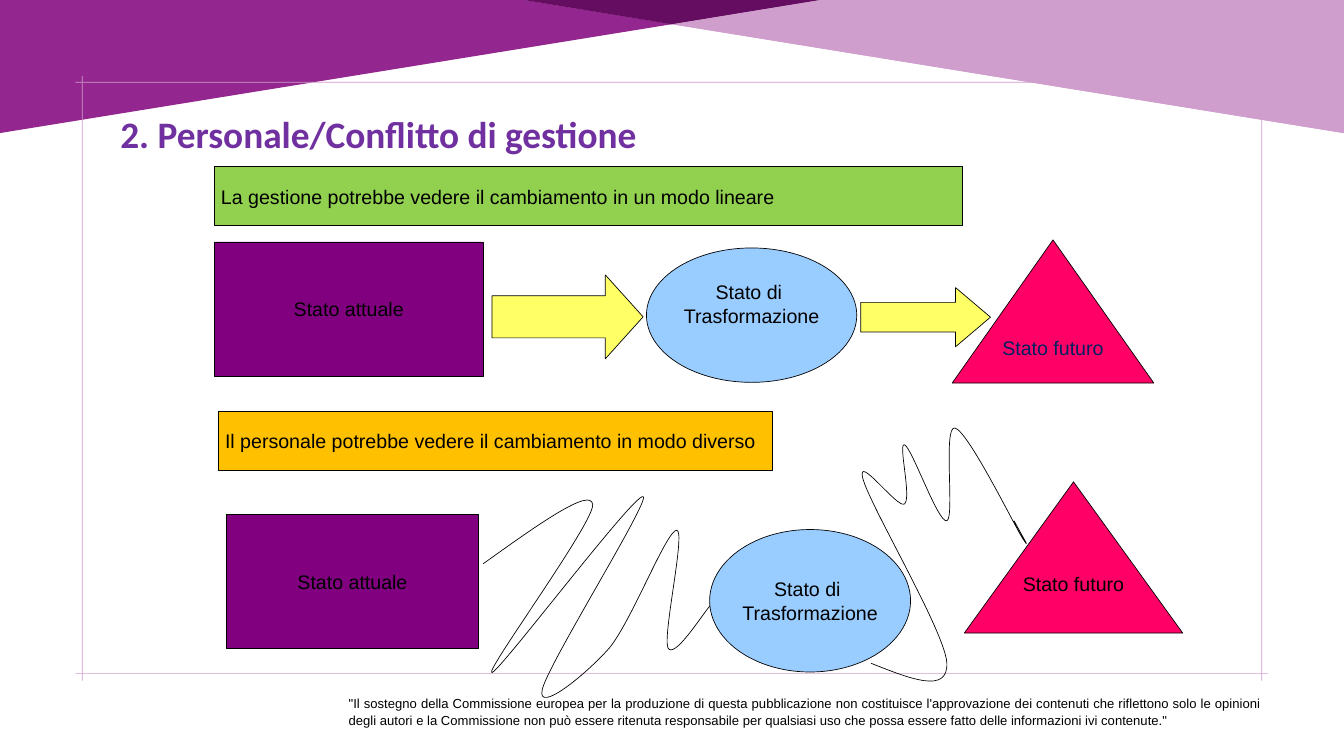
from lxml import etree
from pptx import Presentation
from pptx import util as u
from pptx.dml.color import RGBColor
from pptx.enum import shapes, text
from pptx.oxml import ns

PURPLE = RGBColor(0x93, 0x26, 0x8F)
LILAC = RGBColor(0xCF, 0x9E, 0xCC)
DARK_PURPLE = RGBColor(0x64, 0x0D, 0x61)
TITLE_PURPLE = RGBColor(0x70, 0x30, 0xA0)
BLACK = RGBColor(0, 0, 0)
NAVY = RGBColor(0x00, 0x20, 0x60)
CURRENT_FILL = RGBColor(0x80, 0x00, 0x80)
CHANGE_FILL = RGBColor(0x99, 0xCC, 0xFF)
FUTURE_FILL = RGBColor(0xFF, 0x00, 0x66)
ARROW_FILL = RGBColor(0xFF, 0xFF, 0x66)
GREEN = RGBColor(0x92, 0xD0, 0x50)
ORANGE = RGBColor(0xFF, 0xC0, 0x00)

KIND = shapes.MSO_SHAPE
ALIGN = text.PP_ALIGN
CURRENT = ["Stato attuale"]
CHANGE = ["Stato di ", "Trasformazione"]
FUTURE = ["Stato futuro"]
DISCLAIMER = (
    "\"Il sostegno della Commissione europea per la produzione di questa "
    "pubblicazione non costituisce l'approvazione dei contenuti che riflettono "
    "solo le opinioni degli autori e la Commissione non può essere ritenuta "
    "responsabile per qualsiasi uso che possa essere fatto delle informazioni "
    "ivi contenute.\""
)

# Start point, then control, control, end for each Bézier piece
FIRST_SCRIBBLE = [
    (7.19, 8.39),
    (8, 7.81), (8.8, 7.24), (8.82, 7.51),
    (8.84, 7.78), (7.19, 10.03), (7.32, 10.01),
    (7.44, 9.99), (9.44, 7.34), (9.57, 7.39),
    (9.69, 7.43), (8.15, 9.89), (8.07, 10.26),
    (7.98, 10.64), (8.73, 10.03), (9.07, 9.64),
    (9.4, 9.24), (9.92, 7.89), (10.07, 7.89),
    (10.21, 7.89), (9.86, 9.45), (9.94, 9.64),
    (10.03, 9.82), (10.44, 9.16), (10.57, 9.01),
    (10.69, 8.86), (10.67, 8.78), (10.69, 8.76),
    (10.71, 8.74), (10.67, 8.89), (10.69, 8.89),
    (10.71, 8.89), (10.82, 8.78), (10.82, 8.76),
    (10.82, 8.74), (10.76, 8.75), (10.69, 8.76),
]
SECOND_SCRIBBLE = [
    (12.96, 9.87),
    (13.54, 10.1), (14.11, 10.33), (14.09, 9.87),
    (14.07, 9.41), (12.94, 7.52), (12.84, 7.12),
    (12.74, 6.73), (13.36, 7.58), (13.46, 7.5),
    (13.57, 7.41), (13.36, 6.58), (13.46, 6.62),
    (13.57, 6.66), (13.96, 7.79), (14.09, 7.75),
    (14.21, 7.71), (14.03, 6.33), (14.21, 6.37),
    (14.4, 6.41), (15.07, 7.77), (15.21, 8),
    (15.36, 8.23), (15.22, 7.99), (15.09, 7.75),
]


def box_corners(left, top, right, bottom):
    return [(left, top), (right, top), (right, bottom), (left, bottom)]


class Deck:
    body_font = "Arial"
    label_size = u.Pt(21)
    outline_width = u.Pt(0.75)

    def __init__(self, width, height):
        self.prs = Presentation()
        self.prs.slide_width = u.Inches(width)
        self.prs.slide_height = u.Inches(height)
        self.slide = self.prs.slides.add_slide(self.prs.slide_layouts[5])

    def font(self, paragraph, size, color, name=None, bold=None):
        font = paragraph.font
        font.name = name or self.body_font
        font.size = size
        font.bold = bold
        font.color.rgb = color

    def paint(self, shape, fill=None, outlined=True):
        shape.shadow.inherit = False
        if fill is None:
            shape.fill.background()
        else:
            shape.fill.solid()
            shape.fill.fore_color.rgb = fill
        if outlined:
            shape.line.color.rgb = BLACK
            shape.line.width = self.outline_width
        else:
            shape.line.fill.background()

    def title(self, wording, *box):
        title = self.slide.shapes.title
        title.left, title.top, title.width, title.height = map(u.Inches, box)
        frame = title.text_frame
        frame.text = wording
        frame.vertical_anchor = text.MSO_ANCHOR.TOP
        frame.paragraphs[0].alignment = ALIGN.LEFT
        self.font(frame.paragraphs[0], u.Pt(40), TITLE_PURPLE, "Calibri", True)

    def shape(self, kind, box, fill, lines=(), color=BLACK,
              align=ALIGN.CENTER, lift=0, adjust=()):
        """Preset shape with a label; lift is extra space below the label."""
        shape = self.slide.shapes.add_shape(kind, *map(u.Inches, box))
        self.paint(shape, fill)
        for index, value in enumerate(adjust):
            shape.adjustments[index] = value
        if lines:
            frame = shape.text_frame
            frame.text = "\n".join(lines)
            frame.word_wrap = False
            frame.vertical_anchor = text.MSO_ANCHOR.MIDDLE
            frame.margin_bottom = u.Inches(0.05 + lift)
            for paragraph in frame.paragraphs:
                paragraph.alignment = align
                self.font(paragraph, self.label_size, color)

    def outline(self, *contours, fill=None, outlined=False, close=True):
        builder = None
        for contour in contours:
            start, *rest = [(u.Inches(x), u.Inches(y)) for x, y in contour]
            if builder is None:
                builder = self.slide.shapes.build_freeform(*start, scale=1.0)
            else:
                builder.move_to(*start)
            builder.add_line_segments(rest, close=close)
        shape = builder.convert_to_shape()
        self.paint(shape, fill, outlined)
        return shape

    def scribble(self, points):
        """Open curve: every three line segments become one Bézier piece."""
        shape = self.outline(points, outlined=True, close=False)
        segments = list(shape.element.iter(ns.qn("a:lnTo")))
        for first in range(0, len(segments), 3):
            piece = segments[first:first + 3]
            curve = etree.Element(ns.qn("a:cubicBezTo"))
            piece[0].addprevious(curve)
            for segment in piece:
                curve.append(segment[0])
                segment.getparent().remove(segment)

    def footer(self, wording, *box):
        frame = self.slide.shapes.add_textbox(*map(u.Inches, box)).text_frame
        frame.word_wrap = True
        frame.auto_size = text.MSO_AUTO_SIZE.SHAPE_TO_FIT_TEXT
        frame.text = wording
        paragraph = frame.paragraphs[0]
        paragraph.alignment = ALIGN.JUSTIFY
        paragraph.line_spacing = 1.07
        indent = str(u.Inches(0.01))
        paragraph._p.get_or_add_pPr().set("marL", indent)
        self.font(paragraph, u.Pt(14), BLACK)


def main():
    deck = Deck(20, 11.25)
    deck.outline([(0, 1.98), (0, 0), (7.8, 0), (10, 0.36)], fill=PURPLE)
    for shift in (0, 0.01):
        apex, corner = (10 - shift, 0.36), (12.2 - shift, 0)
        edge = 20 - shift
        deck.outline([(edge, 1.98), apex, corner, (edge, 0)], fill=LILAC)
        deck.outline([apex, (7.8, 0), corner], fill=DARK_PURPLE)
    rules = [box_corners(1.12, y, 18.87, y + 0.01) for y in (1.22, 10.02)]
    rules += [box_corners(x, 1.13, x + 0.01, 10.13) for x in (1.22, 18.77)]
    deck.outline(*rules, fill=LILAC)
    deck.footer(DISCLAIMER, 5.08, 10.29, 13.79, 0.52)
    deck.title("2. Personale/Conflitto di gestione", 1.69, 1.6, 13.5, 1.04)

    # Management's view: a straight path
    deck.shape(KIND.RECTANGLE, (3.19, 3.6, 4, 2), CURRENT_FILL, CURRENT)
    deck.shape(KIND.RIGHT_ARROW, (7.32, 4.09, 2.25, 1.25), ARROW_FILL,
               adjust=(0.5, 0.45))
    deck.shape(KIND.OVAL, (9.62, 3.69, 3.13, 2), CHANGE_FILL, CHANGE, lift=0.34)
    deck.shape(KIND.RIGHT_ARROW, (12.81, 4.28, 1.93, 0.88), ARROW_FILL,
               adjust=(0.5, 0.59))
    deck.shape(KIND.ISOSCELES_TRIANGLE, (14.17, 3.57, 3, 2.13), FUTURE_FILL,
               FUTURE, NAVY)
    deck.shape(KIND.RECTANGLE, (3.19, 2.48, 11.13, 0.88), GREEN,
               ["La gestione potrebbe vedere il cambiamento in un modo lineare"],
               align=ALIGN.LEFT)

    # Staff's view: a tangled path
    deck.shape(KIND.RECTANGLE, (3.37, 7.65, 3.75, 2), CURRENT_FILL, CURRENT)
    deck.scribble(FIRST_SCRIBBLE)
    deck.shape(KIND.OVAL, (10.56, 7.88, 2.99, 2.12), CHANGE_FILL, CHANGE)
    deck.shape(KIND.ISOSCELES_TRIANGLE, (14.35, 7.17, 3.25, 2.25), FUTURE_FILL,
               FUTURE, lift=0.34)
    deck.scribble(SECOND_SCRIBBLE)
    deck.shape(KIND.RECTANGLE, (3.25, 6.12, 8.25, 0.88), ORANGE,
               ["Il personale potrebbe vedere il cambiamento in modo diverso"],
               align=ALIGN.LEFT)
    deck.prs.save("out.pptx")


if __name__ == "__main__":
    main()
